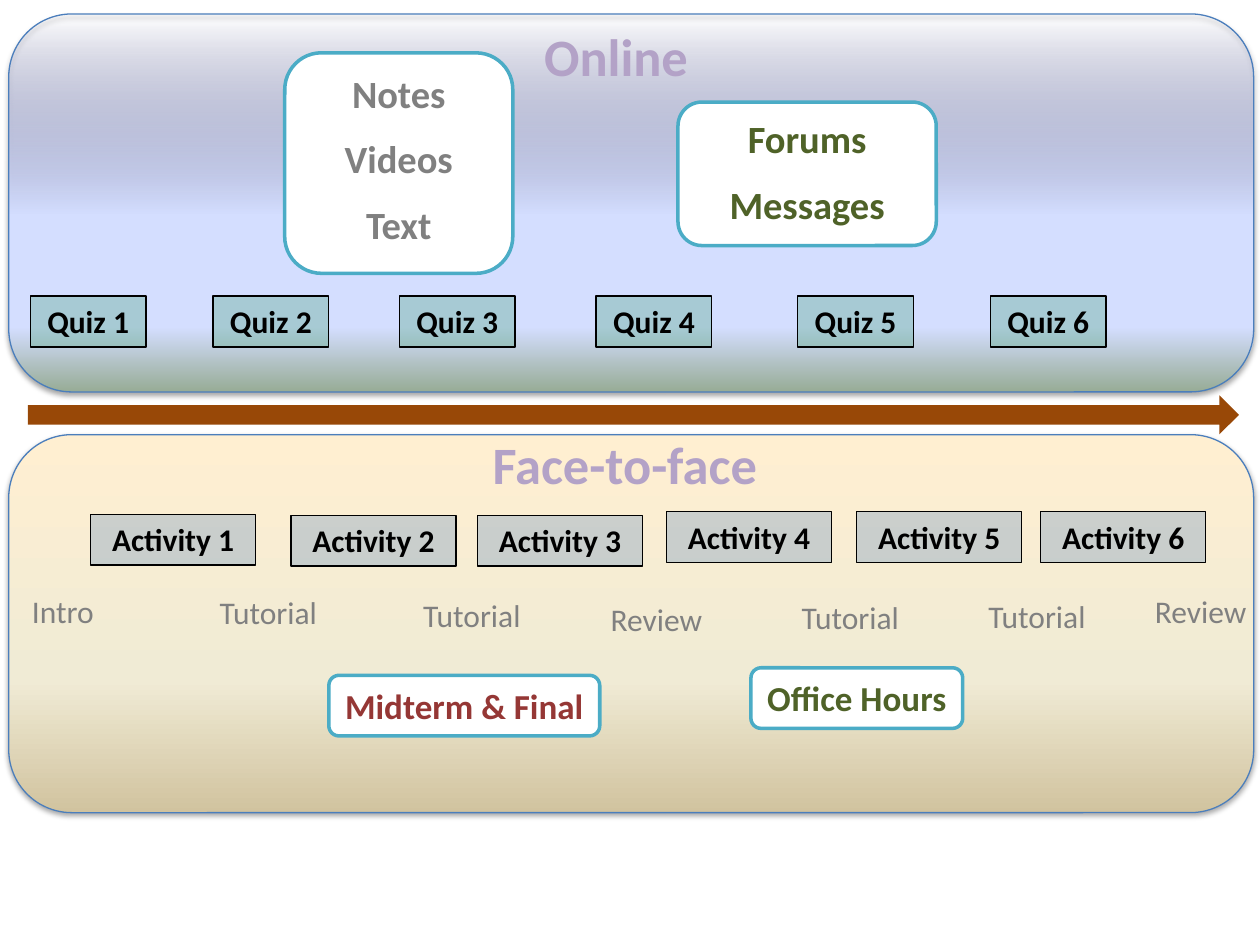
from lxml.etree import SubElement
from pptx import Presentation
from pptx.dml.color import RGBColor
from pptx.enum.shapes import MSO_SHAPE
from pptx.enum.text import MSO_ANCHOR, MSO_AUTO_SIZE, PP_ALIGN
from pptx.oxml.ns import qn
from pptx.util import Pt

COLORS = {
    "arrow": "984807", "panel_line": "4B7EBC", "card_line": "4BACC6",
    "white": "FFFFFF", "black": "000000", "gray": "808080",
    "heading": "B3A2C7", "green": "4F6228", "red": "953735",
    "quiz": "339966", "activity": "4F81BD",
}
ONLINE_STOPS = [(0, "8488C4", 0), (53, "D4DEFF", 100), (83, "D4DEFF", 100), (100, "96AB94", 100)]
CLASS_STOPS = [(0, "FFEFD1", 100), (65, "F0EBD5", 100), (100, "D1C39F", 100)]
QUIZ_LEFTS = [12.3, 116.7, 223.2, 335.6, 450.8, 560.9]
ACTIVITY_SPOTS = [(46.8, 45.4), (161.3, 46), (267.9, 46), (375.9, 44), (484.6, 44), (589.7, 44)]
SESSIONS = [
    ("Intro", 3.6, 86.4, 54.7), ("Tutorial", 103, 87.1, 90.7),
    ("Tutorial", 224.7, 88.6, 80), ("Review", 324.8, 90.7, 90.7),
    ("Tutorial", 435.6, 90, 90.7), ("Tutorial", 542.2, 89.3, 90.7),
    ("Review", 635.8, 86.4, 90.7),
]


def color(name):
    """Return the named color."""
    return RGBColor.from_string(COLORS[name])


def points(box):
    """Convert a box of numbers to lengths."""
    return [Pt(value) for value in box]


def inside(panel, left, top, width, height):
    """Return a box placed relative to the corner of a panel."""
    return panel[0] + left, panel[1] + top, width, height


def add_alpha(color_element, percent):
    """Set the opacity of a color element."""
    SubElement(color_element, qn("a:alpha"), val=str(percent * 1000))


def add_shape(page, kind, box, fill=None, line=None, weight=0.75):
    """Add a shape without shadow, with a plain fill and line."""
    shape = page.shapes.add_shape(kind, *points(box))
    shape.shadow.inherit = False
    if fill:
        shape.fill.solid()
        shape.fill.fore_color.rgb = color(fill)
    if line:
        shape.line.color.rgb = color(line)
        shape.line.width = Pt(weight)
    else:
        shape.line.fill.background()
    return shape


def write(shape, lines, size, ink, bold=True, wrap=True):
    """Write centered lines, spaced by half the text size."""
    frame = shape.text_frame
    frame.word_wrap = wrap
    frame.auto_size = MSO_AUTO_SIZE.SHAPE_TO_FIT_TEXT
    frame.vertical_anchor = MSO_ANCHOR.TOP
    for index, line in enumerate(lines):
        para = frame.add_paragraph() if index else frame.paragraphs[0]
        para.text = line
        para.alignment = PP_ALIGN.CENTER
        if index:
            para.space_before = Pt(size / 2)
        para.font.name = "Calibri"
        para.font.size = Pt(size)
        para.font.bold = bold
        para.font.color.rgb = color(ink)


def add_label(page, box, text, size, ink, bold=True, wrap=True):
    """Add a text box with one line."""
    label = page.shapes.add_textbox(*points(box))
    write(label, [text], size, ink, bold, wrap)


def add_card(page, box, lines, size, ink, wrap=True):
    """Add a white rounded card."""
    card = add_shape(page, MSO_SHAPE.ROUNDED_RECTANGLE, box, "white", "card_line", 2)
    write(card, lines, size, ink, wrap=wrap)


def add_tag(page, box, text, fill):
    """Add a translucent rectangle with a black outline."""
    tag = add_shape(page, MSO_SHAPE.RECTANGLE, box, fill, "black")
    add_alpha(next(tag.fill._xPr.iter(qn("a:srgbClr"))), 28)
    write(tag, [text], 18, "black")


def add_panel(page, box, stops):
    """Add a rounded panel with a downward gradient and a soft shadow."""
    panel = add_shape(page, MSO_SHAPE.ROUNDED_RECTANGLE, box, line="panel_line")
    panel.fill.gradient()
    panel.fill.gradient_angle = 270
    properties = panel._element.spPr
    stop_list = next(properties.iter(qn("a:gsLst")))
    for stop in list(stop_list):
        stop_list.remove(stop)
    for position, value, opacity in stops:
        stop = SubElement(stop_list, qn("a:gs"), pos=str(position * 1000))
        tint = SubElement(stop, qn("a:srgbClr"), val=value)
        if opacity < 100:
            add_alpha(tint, opacity)
    shadow = SubElement(
        properties.find(qn("a:effectLst")), qn("a:outerShdw"),
        blurRad=str(Pt(3.1)), dist=str(Pt(1.8)), dir="5400000", rotWithShape="0",
    )
    add_alpha(SubElement(shadow, qn("a:srgbClr"), val=COLORS["black"]), 35)


def add_online(page, box):
    """Build the online region."""
    add_panel(page, box, ONLINE_STOPS)
    for number, left in enumerate(QUIZ_LEFTS, 1):
        add_tag(page, inside(box, left, 161.2, 66.2, 29.1), f"Quiz {number}", "quiz")
    add_card(page, inside(box, 157.7, 22.2, 130.3, 126), ["Notes", "Videos", "Text"], 22, "gray")
    add_card(page, inside(box, 382.4, 50.3, 147.6, 82), ["Forums", "Messages"], 22, "green")
    add_label(page, inside(box, 298.1, 2.1, 97.9, 43.9), "Online", 30, "heading", wrap=False)


def add_face_to_face(page, box):
    """Build the face-to-face region."""
    add_panel(page, box, CLASS_STOPS)
    for number, (left, top) in enumerate(ACTIVITY_SPOTS, 1):
        add_tag(page, inside(box, left, top, 94.3, 29.1), f"Activity {number}", "activity")
    for text, left, top, width in SESSIONS:
        add_label(page, inside(box, left, top, width, 29.1), text, 18, "gray", bold=False)
    add_card(page, inside(box, 182.9, 137.5, 154.8, 34.6), ["Midterm & Final"], 20, "red", wrap=False)
    add_card(page, inside(box, 424.1, 133.2, 121, 34.6), ["Office Hours"], 20, "green", wrap=False)
    add_label(page, inside(box, 268.6, -5, 167, 43.9), "Face-to-face", 30, "heading", wrap=False)


def add_timeline(page, box):
    """Add an arrow pointing right, as a down arrow turned within the box."""
    left, top, width, height = box
    turned = (left + (width - height) / 2, top - (width - height) / 2, height, width)
    arrow = add_shape(page, MSO_SHAPE.DOWN_ARROW, turned, "arrow")
    arrow.rotation = 270


def main():
    """Build and save the deck."""
    deck = Presentation()
    deck.slide_width, deck.slide_height = Pt(720), Pt(540)
    page = deck.slides.add_slide(deck.slide_layouts[6])
    add_timeline(page, (16, 225.9, 692, 22.3))
    add_face_to_face(page, (5, 248.4, 711.4, 216))
    add_online(page, (5, 8, 711.4, 216))
    deck.save("out.pptx")


if __name__ == "__main__":
    main()
